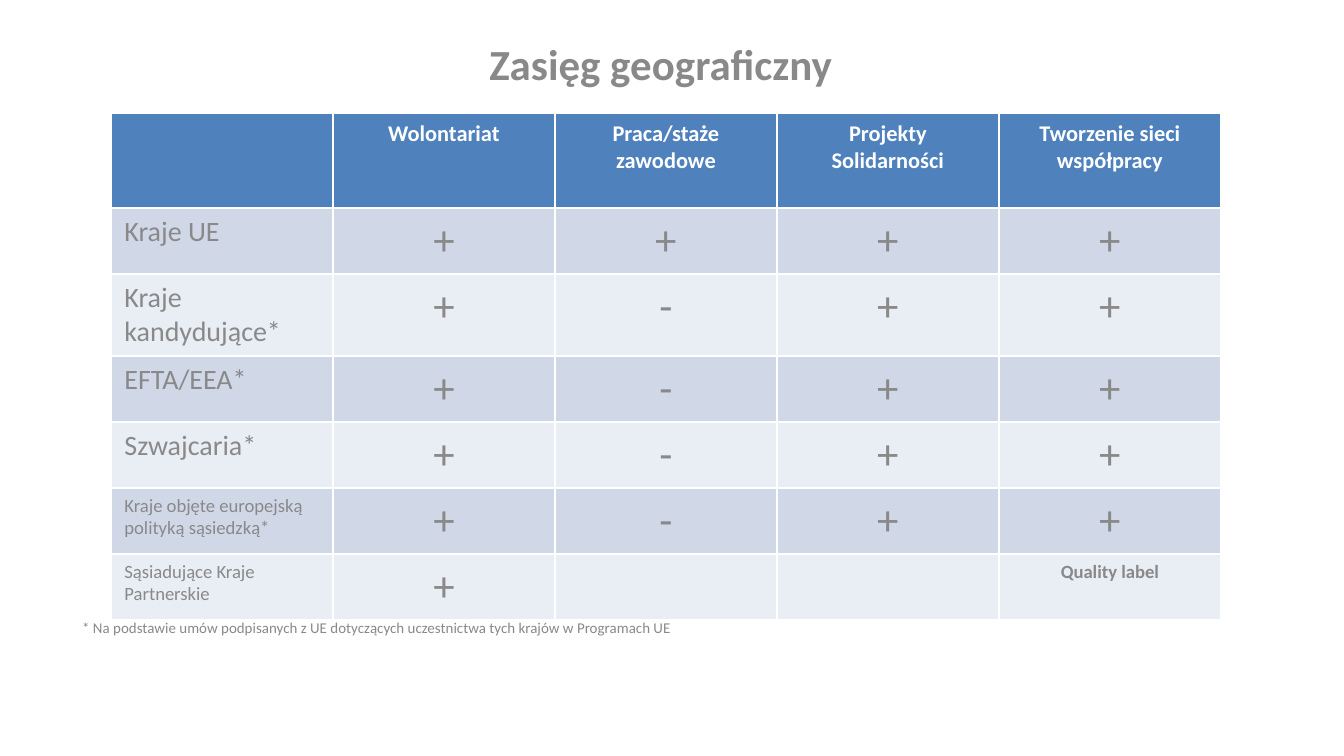
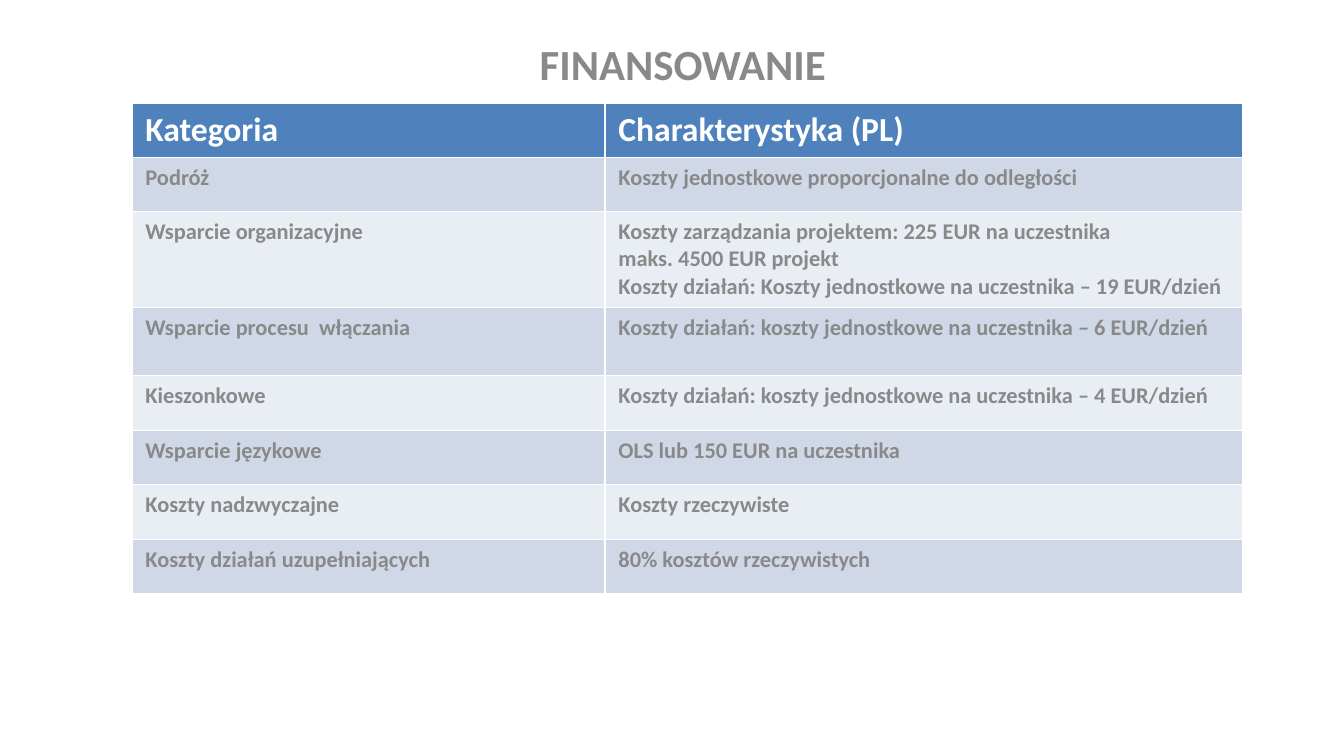
from pptx import Presentation
from pptx.dml.color import RGBColor
from pptx.enum.text import MSO_ANCHOR, PP_ALIGN
from pptx.util import Pt

EMU_PER_INCH = 914400
PX_PER_INCH = 134.4
FONT = "Calibri"
GREY = RGBColor(0x89, 0x89, 0x89)
WHITE = RGBColor(0xFF, 0xFF, 0xFF)
HEADER_BLUE = RGBColor(0x4F, 0x81, 0xBD)
BANDS = (RGBColor(0xD0, 0xD8, 0xE8), RGBColor(0xE9, 0xED, 0xF4))
LEFT = PP_ALIGN.LEFT
CENTER = PP_ALIGN.CENTER
TOP = MSO_ANCHOR.TOP
TITLE_ONLY = 5

REACH_HEADERS = ["", "Wolontariat", "Praca/staże zawodowe",
                 "Projekty Solidarności", "Tworzenie sieci współpracy"]
REACH_ROWS = [
    ("Kraje UE", 15, ["+", "+", "+", "+"]),
    ("Kraje kandydujące*", 15, ["+", "-", "+", "+"]),
    ("EFTA/EEA*", 15, ["+", "-", "+", "+"]),
    ("Szwajcaria*", 15, ["+", "-", "+", "+"]),
    ("Kraje objęte europejską polityką sąsiedzką*", 10, ["+", "-", "+", "+"]),
    ("Sąsiadujące Kraje Partnerskie", 10, ["+", "", "", "Quality label"]),
]
REACH_HEIGHTS = [95, 66, 82, 66, 66, 66, 66]
FOOTNOTE = ("* Na podstawie umów podpisanych z UE dotyczących uczestnictwa "
            "tych krajów w Programach UE")

FUNDING_HEADERS = ["Kategoria", "Charakterystyka (PL)"]
FUNDING_ROWS = [
    ("Podróż", "Koszty jednostkowe proporcjonalne do odległości"),
    ("Wsparcie organizacyjne",
     "Koszty zarządzania projektem: 225 EUR na uczestnika\n"
     "maks. 4500 EUR projekt\n"
     "Koszty działań: Koszty jednostkowe na uczestnika – 19 EUR/dzień"),
    ("Wsparcie procesu  włączania",
     "Koszty działań: koszty jednostkowe na uczestnika – 6 EUR/dzień"),
    ("Kieszonkowe",
     "Koszty działań: koszty jednostkowe na uczestnika – 4 EUR/dzień"),
    ("Wsparcie językowe", "OLS lub 150 EUR na uczestnika"),
    ("Koszty nadzwyczajne", "Koszty rzeczywiste"),
    ("Koszty działań uzupełniających", "80% kosztów rzeczywistych"),
]
FUNDING_HEIGHTS = [54, 54, 96, 68, 55, 54, 55, 54]


def px(length):
    return round(length * EMU_PER_INCH / PX_PER_INCH)


def write_text(text_frame, text, size, color=GREY, bold=False, align=LEFT):
    text_frame.text = text
    for paragraph in text_frame.paragraphs:
        paragraph.alignment = align
        paragraph.font.name = FONT
        paragraph.font.size = Pt(size)
        paragraph.font.bold = bold
        paragraph.font.color.rgb = color


def add_titled_slide(presentation, text, left, width, height):
    slide = presentation.slides.add_slide(presentation.slide_layouts[TITLE_ONLY])
    title = slide.shapes.title
    title.left, title.top = px(left), px(28)
    title.width, title.height = px(width), px(height)
    title.text_frame.vertical_anchor = TOP
    title.text_frame.margin_top = px(10)
    write_text(title.text_frame, text, 23, bold=True, align=CENTER)
    return slide


def add_banded_table(slide, left, top, widths, heights):
    table = slide.shapes.add_table(
        len(heights), len(widths), px(left), px(top),
        px(sum(widths)), px(sum(heights))).table
    for column, width in zip(table.columns, widths):
        column.width = px(width)
    for index, (row, height) in enumerate(zip(table.rows, heights)):
        row.height = px(height)
        for cell in row.cells:
            cell.fill.solid()
            cell.fill.fore_color.rgb = BANDS[(index - 1) % 2] if index else HEADER_BLUE
    return table


def fill_header(table, headers, size, align):
    for column, text in enumerate(headers):
        if text:
            write_text(table.cell(0, column).text_frame, text, size, WHITE, True, align)


def fill_reach_table(table):
    fill_header(table, REACH_HEADERS, 12, CENTER)
    for row, (region, size, marks) in enumerate(REACH_ROWS, 1):
        write_text(table.cell(row, 0).text_frame, region, size)
        for column, mark in enumerate(marks, 1):
            if mark:
                is_label = len(mark) > 1
                write_text(table.cell(row, column).text_frame, mark,
                           10 if is_label else 23, bold=is_label, align=CENTER)


def fill_funding_table(table):
    fill_header(table, FUNDING_HEADERS, 18, LEFT)
    for row, texts in enumerate(FUNDING_ROWS, 1):
        for column, text in enumerate(texts):
            write_text(table.cell(row, column).text_frame, text, 12, bold=True)


def add_footnote(slide, text):
    box = slide.shapes.add_textbox(px(69), px(612), px(1164), px(32))
    box.text_frame.word_wrap = True
    write_text(box.text_frame, text, 8)


def main():
    presentation = Presentation()
    presentation.slide_width = px(1344)
    presentation.slide_height = px(756)

    reach = add_titled_slide(presentation, "Zasięg geograficzny", 90, 1142, 85)
    add_footnote(reach, FOOTNOTE)
    fill_reach_table(add_banded_table(reach, 111, 113, [222] * 5, REACH_HEIGHTS))

    funding = add_titled_slide(presentation, "FINANSOWANIE", 101, 1164, 90)
    fill_funding_table(add_banded_table(funding, 132, 103, [473, 638], FUNDING_HEIGHTS))

    presentation.save("out.pptx")


if __name__ == "__main__":
    main()
